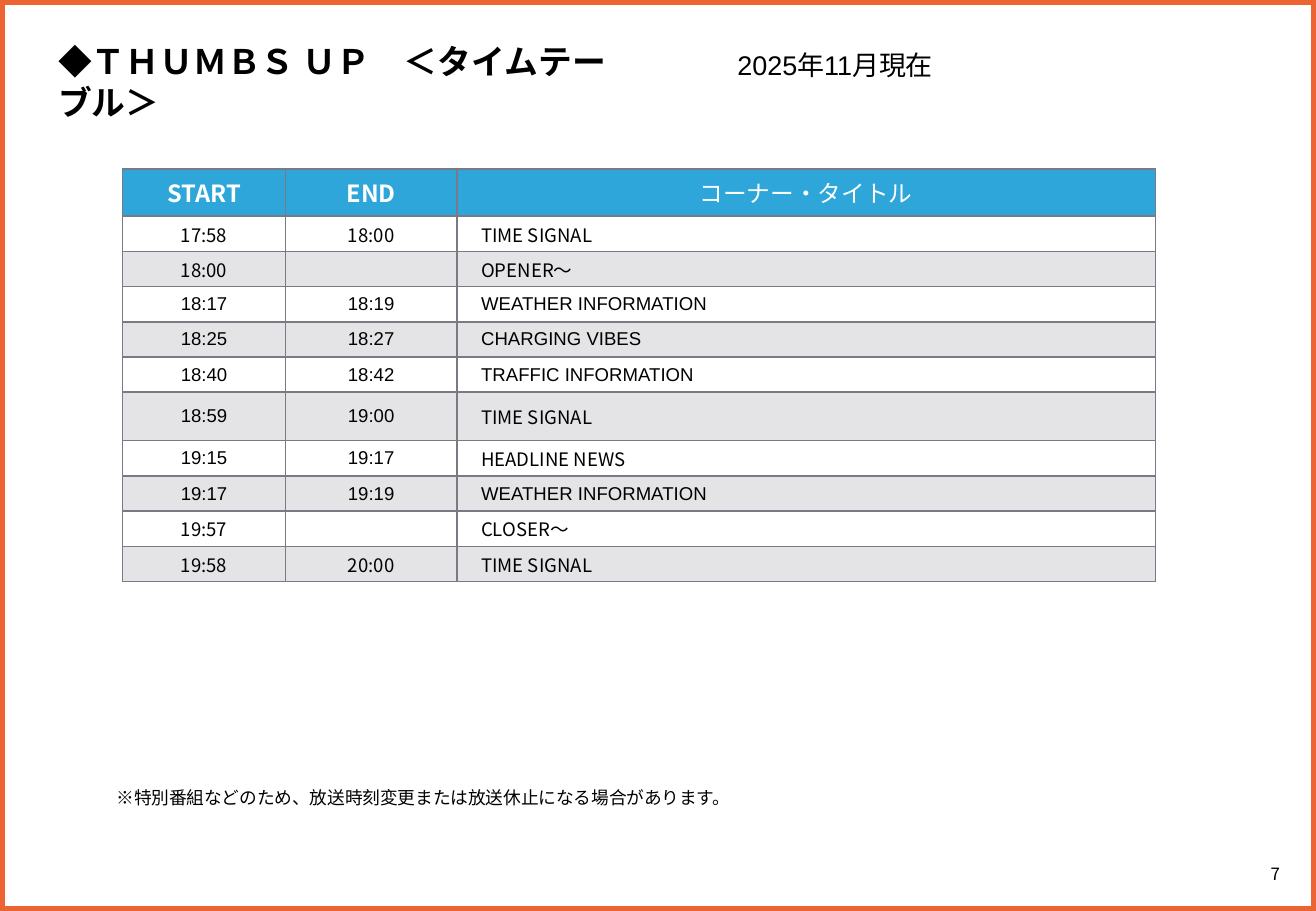
from lxml import etree
from pptx import Presentation
from pptx.dml.color import RGBColor
from pptx.enum.shapes import MSO_SHAPE
from pptx.enum.text import MSO_ANCHOR, PP_ALIGN
from pptx.oxml.ns import qn
from pptx.util import Pt

PX = 9144
WIDTH, HEIGHT = 1083, 750
RECT = MSO_SHAPE.RECTANGLE
MIDDLE, TOP = MSO_ANCHOR.MIDDLE, MSO_ANCHOR.TOP
LEFT, CENTER = PP_ALIGN.LEFT, PP_ALIGN.CENTER
ARIAL, NOTO = "Arial", "Noto Sans CJK JP"
COLORS = {
    "frame": "EB6432",
    "header": "2EA6DA",
    "grid": "797B84",
    "text": "000000",
    "header_text": "FFFFFF",
}
COLUMNS = (134, 141, 575)
HEADER_HEIGHT, ROW_HEIGHT, TALL_HEIGHT = 39, 29, 40
TITLE_INDENT = 20
HEADERS = (("START", NOTO, True), ("END", NOTO, True), ("コーナー・タイトル", ARIAL, False))
PROGRAM = (
    ("17:58", "18:00", "TIME SIGNAL", NOTO, NOTO, ROW_HEIGHT),
    ("18:00", "", "OPENER〜", NOTO, NOTO, ROW_HEIGHT),
    ("18:17", "18:19", "WEATHER INFORMATION", ARIAL, ARIAL, ROW_HEIGHT),
    ("18:25", "18:27", "CHARGING VIBES", ARIAL, ARIAL, ROW_HEIGHT),
    ("18:40", "18:42", "TRAFFIC INFORMATION", ARIAL, ARIAL, ROW_HEIGHT),
    ("18:59", "19:00", "TIME SIGNAL", ARIAL, NOTO, TALL_HEIGHT),
    ("19:15", "19:17", "HEADLINE NEWS", ARIAL, NOTO, ROW_HEIGHT),
    ("19:17", "19:19", "WEATHER INFORMATION", ARIAL, ARIAL, ROW_HEIGHT),
    ("19:57", "", "CLOSER～", NOTO, NOTO, ROW_HEIGHT),
    ("19:58", "20:00", "TIME SIGNAL", NOTO, NOTO, ROW_HEIGHT),
)


def rgb(name):
    """Return the named palette colour."""
    return RGBColor.from_string(COLORS[name])


def emu(*lengths):
    """Turn px lengths into EMU."""
    return [n * PX for n in lengths]


def style(p, size, font=NOTO, bold=False, color="text", align=LEFT):
    """Set the font and alignment of a paragraph."""
    p.alignment = align
    f = p.font
    f.size, f.name, f.bold = Pt(size), font, bold
    f.color.rgb = rgb(color)
    props = p._p.pPr.find(qn("a:defRPr"))
    etree.SubElement(props, qn("a:ea"), typeface=NOTO)
    if not p.runs:
        etree.SubElement(p._p, qn("a:endParaRPr"), sz=str(size * 100))


def add_text(s, box, text, size, anchor=TOP, **look):
    """Add a wrapped text box with one paragraph."""
    tf = s.shapes.add_textbox(*emu(*box)).text_frame
    tf.word_wrap = True
    tf.vertical_anchor = anchor
    p = tf.paragraphs[0]
    p.text = text
    style(p, size, **look)


def add_frame(s, box):
    """Outline the given box."""
    sp = s.shapes.add_shape(RECT, *emu(*box))
    sp.shadow.inherit = False
    sp.fill.background()
    sp.line.color.rgb = rgb("frame")
    sp.line.width = Pt(6)


def add_borders(cell):
    """Draw thin lines on all four sides of a cell."""
    props = cell._tc.get_or_add_tcPr()
    for i, side in enumerate(("lnL", "lnR", "lnT", "lnB")):
        line = etree.Element(qn(f"a:{side}"), w=str(Pt(1)))
        fill = etree.SubElement(line, qn("a:solidFill"))
        etree.SubElement(fill, qn("a:srgbClr"), val=COLORS["grid"])
        props.insert(i, line)


def fill_cell(cell, text, size, fill=None, alpha=None, indent=0, **look):
    """Write and decorate one table cell."""
    cell.margin_left = indent * PX
    cell.margin_right = cell.margin_top = cell.margin_bottom = 0
    cell.vertical_anchor = MIDDLE
    p = cell.text_frame.paragraphs[0]
    if text:
        p.text = text
    style(p, size, **look)
    if fill:
        cell.fill.solid()
        cell.fill.fore_color.rgb = rgb(fill)
    else:
        cell.fill.background()
    if alpha:
        color = cell._tc.tcPr.find(".//" + qn("a:srgbClr"))
        etree.SubElement(color, qn("a:alpha"), val=str(alpha * 1000))
    add_borders(cell)


def add_timetable(s, left, top):
    """Add the programme table at the given corner."""
    heights = [HEADER_HEIGHT] + [row[-1] for row in PROGRAM]
    box = emu(left, top, sum(COLUMNS), sum(heights))
    table = s.shapes.add_table(len(heights), len(COLUMNS), *box).table
    table.horz_banding = False
    for column, width in zip(table.columns, COLUMNS):
        column.width = width * PX
    for row, height in zip(table.rows, heights):
        row.height = height * PX
    for c, (text, font, bold) in enumerate(HEADERS):
        fill_cell(table.cell(0, c), text, 14, "header", font=font, bold=bold,
                  color="header_text", align=CENTER)
    for r, (start, end, title, time_font, title_font, _) in enumerate(PROGRAM, 1):
        shade = ("grid", 20) if r % 2 == 0 else (None, None)
        for c, time in enumerate((start, end)):
            fill_cell(table.cell(r, c), time, 11, *shade, font=time_font, align=CENTER)
        fill_cell(table.cell(r, 2), title, 11, *shade, indent=TITLE_INDENT, font=title_font)


def add_heading(s, left, top):
    """Add the slide title and the date to its right."""
    add_text(s, (left, top, 480, 44), "◆ＴＨＵＭＢＳ ＵＰ　＜タイムテーブル＞", 20, bold=True)
    add_text(s, (left + 559, top + 6, 213, 37), "2025年11月現在", 16, font=ARIAL)


def add_footer(s, left, top):
    """Add the note and the page number."""
    note = "※特別番組などのため、放送時刻変更または放送休止になる場合があります。"
    add_text(s, (left, top, 862, 28), note, 10.5)
    add_text(s, (WIDTH - 67, top + 59, 67, 35), "7", 10, anchor=MIDDLE, align=CENTER)


def main():
    """Build and save the timetable slide."""
    prs = Presentation()
    prs.slide_width, prs.slide_height = emu(WIDTH, HEIGHT)
    s = prs.slides.add_slide(prs.slide_layouts[6])
    add_frame(s, (0, 0, WIDTH, HEIGHT))
    add_heading(s, 38, 29)
    add_timetable(s, 101, 139)
    add_footer(s, 86, 643)
    prs.save("out.pptx")


if __name__ == "__main__":
    main()
